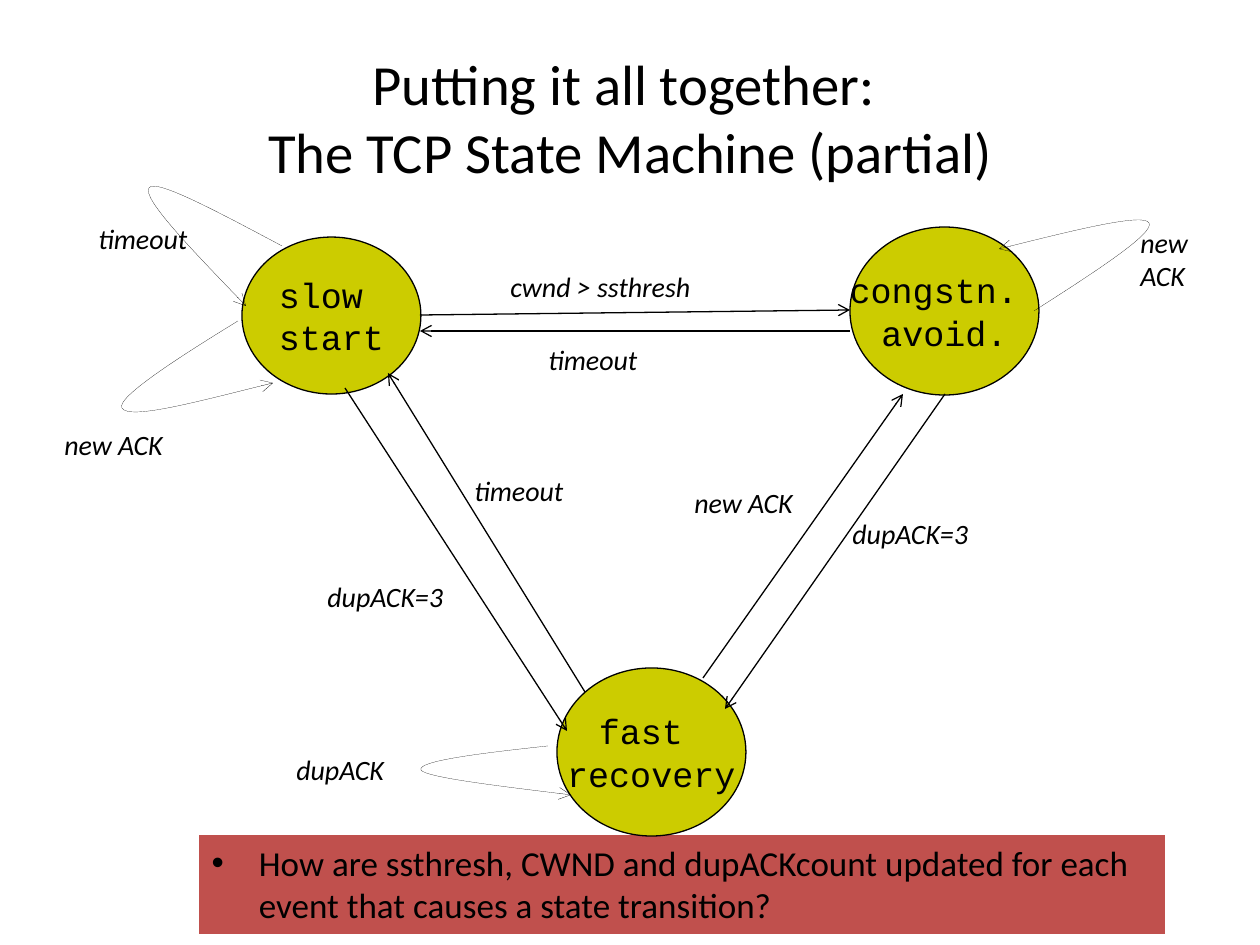
from copy import deepcopy

from pptx import Presentation, util as u
from pptx.dml.color import RGBColor
from pptx.enum import shapes, text
from pptx.oxml import ns, xmlchemy as xc

PX = 914400 / 126
BLACK, OLIVE, RED = "000000", "CCCC00", "C0504D"
LINE = 0.75


def emu(*vals):
    return [round(v * PX) for v in vals]


def color(code):
    return RGBColor.from_string(code)


class Board:
    fonts = {
        "title": {"name": "Calibri", "size": u.Pt(32.4)},
        "body": {"name": "Calibri", "size": u.Pt(20)},
        "state": {"name": "Courier New", "size": u.Pt(20)},
        "label": {"name": "Calibri", "size": u.Pt(16), "italic": True},
    }

    def __init__(self, slide):
        self.slide = slide
        self.shapes = slide.shapes

    def letter(self, shape, words, style, align=None, **frame):
        """Fill a shape with one paragraph; \\v breaks the line."""
        tf = shape.text_frame
        for key, val in frame.items():
            setattr(tf, key, val)
        para = tf.paragraphs[0]
        para.text = words
        para.alignment = align
        for run in para.runs:
            for key, val in self.fonts[style].items():
                setattr(run.font, key, val)
            run.font.color.rgb = color(BLACK)
        for br in para._p.findall(ns.qn("a:br")):
            br.append(deepcopy(para.runs[0]._r.rPr))

    def holder(self, idx, box, words, style, align=None, fill=None):
        shape = self.slide.placeholders[idx]
        shape.left, shape.top, shape.width, shape.height = emu(*box)
        if fill:
            shape.fill.solid()
            shape.fill.fore_color.rgb = color(fill)
        self.letter(shape, words, style, align,
                    auto_size=text.MSO_AUTO_SIZE.NONE)

    def state(self, box, words):
        oval = self.shapes.add_shape(shapes.MSO_SHAPE.OVAL, *emu(*box))
        oval.shadow.inherit = False
        oval.fill.solid()
        oval.fill.fore_color.rgb = color(OLIVE)
        oval.line.color.rgb = color(BLACK)
        oval.line.width = u.Pt(LINE)
        self.letter(oval, words, "state", text.PP_ALIGN.CENTER,
                    word_wrap=False, vertical_anchor=text.MSO_ANCHOR.MIDDLE)

    def label(self, box, words):
        self.letter(self.shapes.add_textbox(*emu(*box)), words, "label",
                    word_wrap=False,
                    auto_size=text.MSO_AUTO_SIZE.SHAPE_TO_FIT_TEXT)

    def head(self, line):
        line.color.rgb = color(BLACK)
        tail = xc.OxmlElement("a:tailEnd")
        tail.set("type", "arrow")
        line._get_or_add_ln().append(tail)

    def arrow(self, ends):
        link = self.shapes.add_connector(shapes.MSO_CONNECTOR.STRAIGHT,
                                         *emu(*ends))
        link.line.width = u.Pt(LINE)
        self.head(link.line)
        link._element.spPr.append(xc.OxmlElement("a:effectLst"))

    def loop(self, points):
        """Draw a hairline arrow of cubic curves: start, then three points each."""
        start, *rest = [emu(*pt) for pt in points]
        pen = self.shapes.build_freeform(*start)
        pen.add_line_segments(rest, close=False)
        shape = pen.convert_to_shape()
        shape.fill.background()
        self.head(shape.line)
        node = shape._element
        node.remove(node.find(ns.qn("p:style")))
        track = next(node.iter(ns.qn("a:path")))
        steps = track.findall(ns.qn("a:lnTo"))
        for i in range(0, len(steps), 3):
            curve = xc.OxmlElement("a:cubicBezTo")
            for step in steps[i:i + 3]:
                curve.append(step[0])
                track.remove(step)
            track.append(curve)


STATES = [
    ((242, 237, 179, 157), "slow \vstart"),
    ((850, 227, 189, 168), "congstn. \vavoid."),
    ((557, 668, 189, 168), "fast \vrecovery"),
]
ARROWS = [
    (420, 315, 850, 310),
    (850, 331, 420, 331),
    (345, 388, 567, 731),
    (945, 394, 725, 709),
    (703, 678, 903, 394),
    (585, 692, 388, 373),
]
LABELS = [
    ((498, 263, 237, 47), "cwnd > ssthresh"),
    ((536, 336, 125, 47), "timeout"),
    ((315, 573, 170, 47), "dupACK=3"),
    ((462, 467, 125, 47), "timeout"),
    ((840, 510, 170, 47), "dupACK=3"),
    ((682, 479, 149, 47), "new ACK"),
    ((284, 746, 137, 47), "dupACK"),
    ((52, 421, 149, 47), "new ACK"),
    ((86, 215, 125, 47), "timeout"),
    ((1128, 219, 91, 81), "new \vACK"),
]
LOOPS = [
    [(548, 746), (483, 753), (417, 761), (421, 770),
     (425, 777), (498, 786), (571, 795)],
    [(238, 321), (176, 359), (116, 398), (122, 408),
     (129, 420), (200, 401), (273, 383)],
    [(282, 246), (218, 212), (155, 178), (149, 188),
     (142, 198), (194, 252), (246, 306)],
    [(1034, 311), (1095, 272), (1155, 233), (1149, 223),
     (1144, 213), (1071, 231), (999, 249)],
]


def main():
    deck = Presentation()
    deck.slide_width, deck.slide_height = emu(1260, 945)
    board = Board(deck.slides.add_slide(deck.slide_layouts[1]))
    board.holder(0, (63, 38, 1134, 158),
                 "Putting it all together: \vThe TCP State Machine (partial)",
                 "title", text.PP_ALIGN.CENTER)
    board.holder(1, (199, 835, 966, 99),
                 "How are ssthresh, CWND and dupACKcount updated for each "
                 "event that causes a state transition?", "body", fill=RED)
    for box, words in STATES:
        board.state(box, words)
    for ends in ARROWS:
        board.arrow(ends)
    for box, words in LABELS:
        board.label(box, words)
    for points in LOOPS:
        board.loop(points)
    deck.save("out.pptx")


if __name__ == "__main__":
    main()
